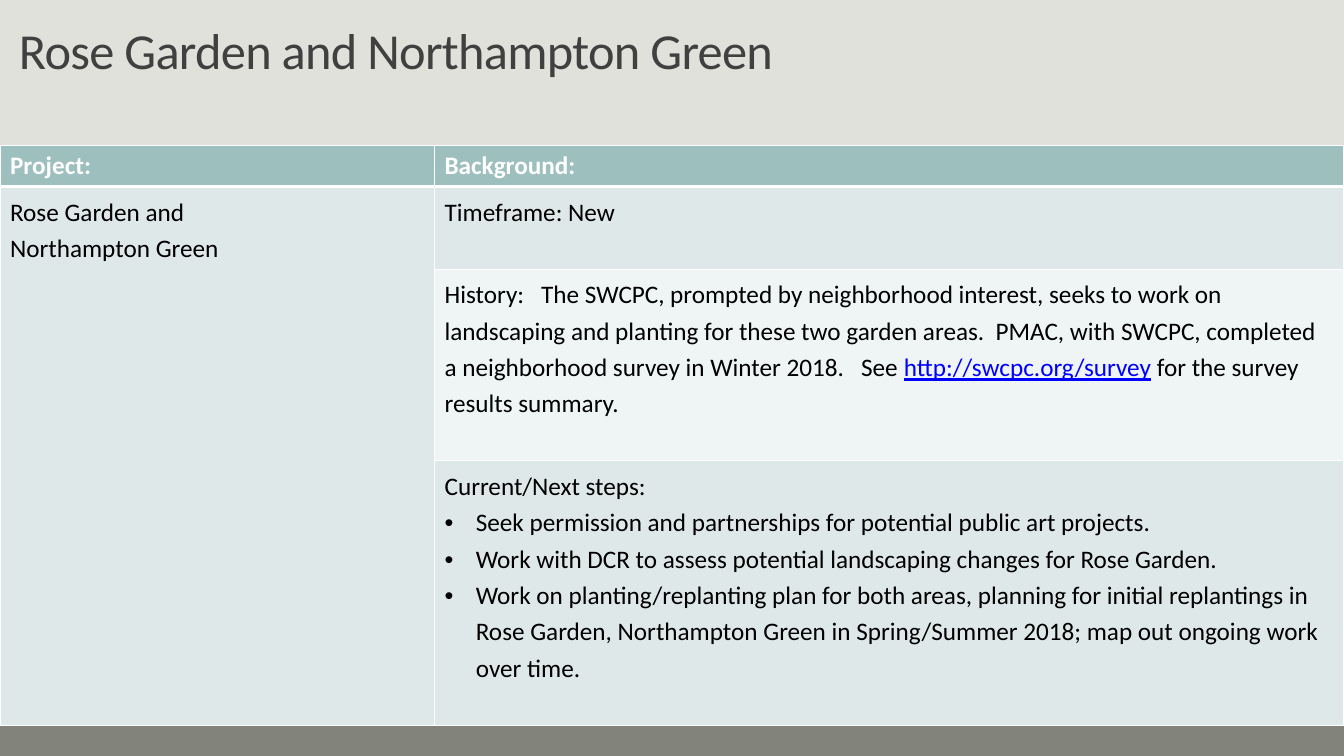
from lxml import etree
from pptx import Presentation
from pptx.dml.color import RGBColor
from pptx.enum.shapes import MSO_SHAPE
from pptx.enum.text import MSO_ANCHOR
from pptx.oxml.ns import qn
from pptx.util import Inches, Pt

RECTANGLE = MSO_SHAPE.RECTANGLE
BOTTOM = MSO_ANCHOR.BOTTOM

# Content: a cell is a list of paragraphs, a paragraph a list of runs
TITLE = "Rose Garden and Northampton Green"
LINK = "http://swcpc.org/survey"
HEADERS = ["Project:", "Background:"]
PROJECT = [["Rose Garden and"], ["Northampton Green"]]
BACKGROUND = [
    [["Timeframe: New"]],
    [["History:   The SWCPC, prompted by neighborhood interest, seeks to work on "
      "landscaping and planting for these two garden areas.  PMAC, with SWCPC, "
      "completed a neighborhood survey in Winter 2018.   See ",
      LINK, " for the survey results summary."]],
    [["Current/Next steps:"],
     ["Seek permission and partnerships for potential public art projects."],
     ["Work with DCR to assess potential landscaping changes for Rose Garden."],
     ["Work on planting/replanting plan for both areas, planning for initial "
      "replantings in Rose Garden, Northampton Green in Spring/Summer 2018; "
      "map out ongoing work over time."]],
]
STEPS_ROW = 3

# Layout in inches
WIDTH, HEIGHT = 13.33, 7.5
BAR_HEIGHT = 0.5
TABLE_TOP = 1.44
COLUMNS = [4.31, 9.02]
ROWS = [0.41, 0.82, 1.9, 2.63]
BULLET_INDENT = 0.31

# Style
FONT = "Calibri"
WHITE, BLACK, BLUE = "FFFFFF", "000000", "0000FF"
HEADER_FILL = "9DBFBE"
BAND_FILLS = ["DFE8E8", "EFF4F4"]


def color(value):
    return RGBColor.from_string(value)


def add_run(paragraph, text, size, text_color, bold=False):
    run = paragraph.add_run()
    run.text = text
    run.font.name = FONT
    run.font.size = Pt(size)
    run.font.bold = bold
    run.font.color.rgb = color(text_color)
    return run


def set_bullet(paragraph):
    properties = paragraph._p.get_or_add_pPr()
    properties.set("marL", str(Inches(BULLET_INDENT)))
    properties.set("indent", str(-Inches(BULLET_INDENT)))
    etree.SubElement(properties, qn("a:buFont")).set("typeface", "Arial")
    etree.SubElement(properties, qn("a:buChar")).set("char", "•")


def set_borders(cell, top, bottom):
    properties = cell._tc.get_or_add_tcPr()
    sides = [("a:lnL", 1), ("a:lnR", 1), ("a:lnT", top), ("a:lnB", bottom)]
    for position, (side, width) in enumerate(sides):
        line = etree.Element(qn(side), w=str(Pt(width)))
        fill = etree.SubElement(line, qn("a:solidFill"))
        etree.SubElement(fill, qn("a:srgbClr")).set("val", WHITE)
        properties.insert(position, line)


def fill_cell(cell, paragraphs, bulleted=False):
    for index, runs in enumerate(paragraphs):
        frame = cell.text_frame
        paragraph = frame.add_paragraph() if index else frame.paragraphs[0]
        paragraph.line_spacing = Pt(26)
        if bulleted and index:
            set_bullet(paragraph)
        for text in runs:
            run = add_run(paragraph, text, 18, BLUE if text == LINK else BLACK)
            run.font.underline = text == LINK


presentation = Presentation()
presentation.slide_width = Inches(WIDTH)
presentation.slide_height = Inches(HEIGHT)
slide = presentation.slides.add_slide(presentation.slide_layouts[6])
slide.background.fill.solid()
slide.background.fill.fore_color.rgb = color("E1E1DB")

# Footer bar
bar = slide.shapes.add_shape(RECTANGLE, 0, Inches(HEIGHT - BAR_HEIGHT),
                             Inches(WIDTH), Inches(BAR_HEIGHT))
bar.shadow.inherit = False
bar.fill.solid()
bar.fill.fore_color.rgb = color("82847C")
bar.line.fill.background()

# Title
title = slide.shapes.add_textbox(Inches(0.09), Inches(0.09), Inches(12.8), Inches(0.72))
title.text_frame.word_wrap = True
title.text_frame.vertical_anchor = BOTTOM
title.text_frame.margin_bottom = Inches(0.02)
title_run = add_run(title.text_frame.paragraphs[0], TITLE, 36, "404040")
title_run.font._element.set("spc", "-50")

# Table grid
table = slide.shapes.add_table(len(ROWS), len(COLUMNS), 0, Inches(TABLE_TOP),
                               Inches(sum(COLUMNS)), Inches(sum(ROWS))).table
for column, width in zip(table.columns, COLUMNS):
    column.width = Inches(width)
for row, height in zip(table.rows, ROWS):
    row.height = Inches(height)
table.cell(1, 0).merge(table.cell(len(ROWS) - 1, 0))

# Cell fills and borders
for row in range(len(ROWS)):
    for column in range(len(COLUMNS)):
        cell = table.cell(row, column)
        band = 0 if column == 0 else (row - 1) % 2
        cell.fill.solid()
        cell.fill.fore_color.rgb = color(BAND_FILLS[band] if row else HEADER_FILL)
        set_borders(cell, top=3 if row == 1 else 1, bottom=1 if row else 3)

# Table text
for column, header in enumerate(HEADERS):
    add_run(table.cell(0, column).text_frame.paragraphs[0], header, 18, WHITE, bold=True)
fill_cell(table.cell(1, 0), PROJECT)
for row, paragraphs in enumerate(BACKGROUND, start=1):
    fill_cell(table.cell(row, 1), paragraphs, bulleted=row == STEPS_ROW)

presentation.save("out.pptx")
